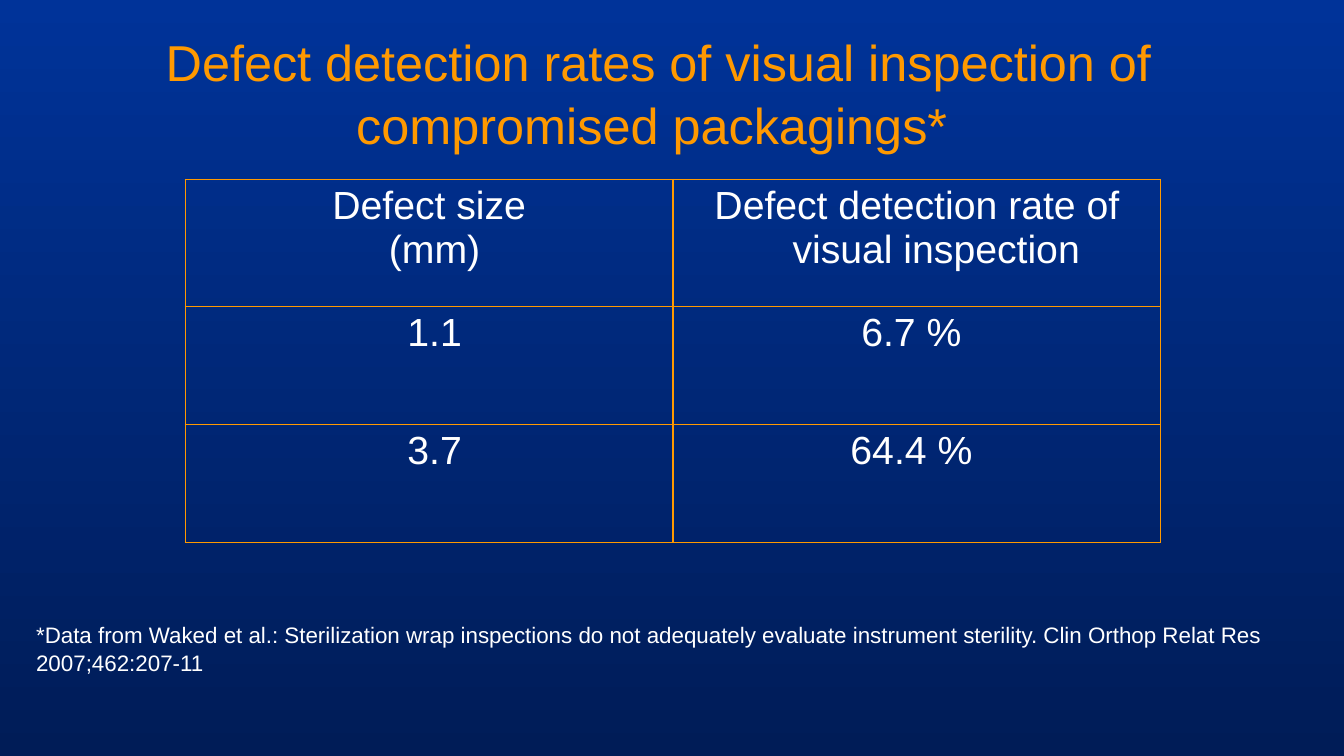
"""Build a slide with a table of defect detection rates."""
from lxml.etree import SubElement
from pptx import Presentation
from pptx.dml.color import RGBColor
from pptx.enum.text import MSO_ANCHOR as ANCHOR, PP_ALIGN as ALIGN
from pptx.oxml.ns import qn
from pptx.util import Cm, Pt

ORANGE, WHITE = "FF9900", "FFFFFF"
BACKGROUND = ("003399", "001C57")
TITLE = "Defect detection rates of visual inspection of compromised packagings* "
SOURCE = ("*Data from Waked et al.: Sterilization wrap inspections do not adequately "
          "evaluate instrument sterility. Clin Orthop Relat Res 2007;462:207-11")
ROWS = [
    ("Defect size\n (mm)", "Defect detection rate of visual inspection"),
    (" 1.1", "6.7 % "),
    (" 3.7", "64.4 % "),
]
ROW_HEIGHTS = (3.2, 2.97, 2.97)
COLUMN_WIDTH = 12.29
HANGING = 0.97


def rgb(value):
    """Turn a hex string into a colour."""
    return RGBColor.from_string(value)


def write(tf, text, size, color, align):
    """Fill a text frame, one paragraph per line."""
    tf.word_wrap = True
    tf.text = text
    for p in tf.paragraphs:
        p.alignment = align
        p.font.name, p.font.size = "Arial", Pt(size)
        p.font.color.rgb = rgb(color)


def add_text(slide, left, top, text, size, color, align):
    """Add a vertically centred text box."""
    tf = slide.shapes.add_textbox(Cm(left), Cm(top), Cm(33.2), Cm(3.18)).text_frame
    tf.vertical_anchor = ANCHOR.MIDDLE
    write(tf, text, size, color, align)
    for p in tf.paragraphs:
        p.line_spacing = 1.05


def add_borders(cell, color):
    """Draw a thin line on every side of a cell."""
    tc_pr = cell._tc.get_or_add_tcPr()
    for i, side in enumerate(("lnL", "lnR", "lnT", "lnB")):
        ln = tc_pr.makeelement(qn(f"a:{side}"), {"w": str(Pt(1))})
        fill = SubElement(ln, qn("a:solidFill"))
        SubElement(fill, qn("a:srgbClr"), val=color)
        tc_pr.insert(i, ln)


def add_rates(slide):
    """Add the table of detection rates."""
    frame = slide.shapes.add_table(len(ROWS), len(ROWS[0]), Cm(4.67), Cm(4.52),
                                   Cm(2 * COLUMN_WIDTH), Cm(sum(ROW_HEIGHTS)))
    table = frame.table
    table.first_row = table.horz_banding = False
    for column in table.columns:
        column.width = Cm(COLUMN_WIDTH)
    for row, height, texts in zip(table.rows, ROW_HEIGHTS, ROWS):
        row.height = Cm(height)
        for cell, text in zip(row.cells, texts):
            cell.fill.background()
            add_borders(cell, ORANGE)
            write(cell.text_frame, text, 28, WHITE, ALIGN.CENTER)
            if "\n" not in text:
                p_pr = cell.text_frame.paragraphs[0]._p.get_or_add_pPr()
                p_pr.set("marL", str(Cm(HANGING)))
                p_pr.set("indent", str(-Cm(HANGING)))


def main():
    """Build and save the slide."""
    prs = Presentation()
    prs.slide_width, prs.slide_height = Cm(33.87), Cm(19.05)
    slide = prs.slides.add_slide(prs.slide_layouts[6])
    fill = slide.background.fill
    fill.gradient()
    fill.gradient_angle = 270
    for stop, color, position in zip(fill.gradient_stops, BACKGROUND, (0, 1)):
        stop.color.rgb, stop.position = rgb(color), position
    add_text(slide, 0, 0.71, TITLE, 36, ORANGE, ALIGN.CENTER)
    add_rates(slide)
    add_text(slide, 0.66, 14.73, SOURCE, 16, WHITE, ALIGN.LEFT)
    prs.save("out.pptx")


if __name__ == "__main__":
    main()
